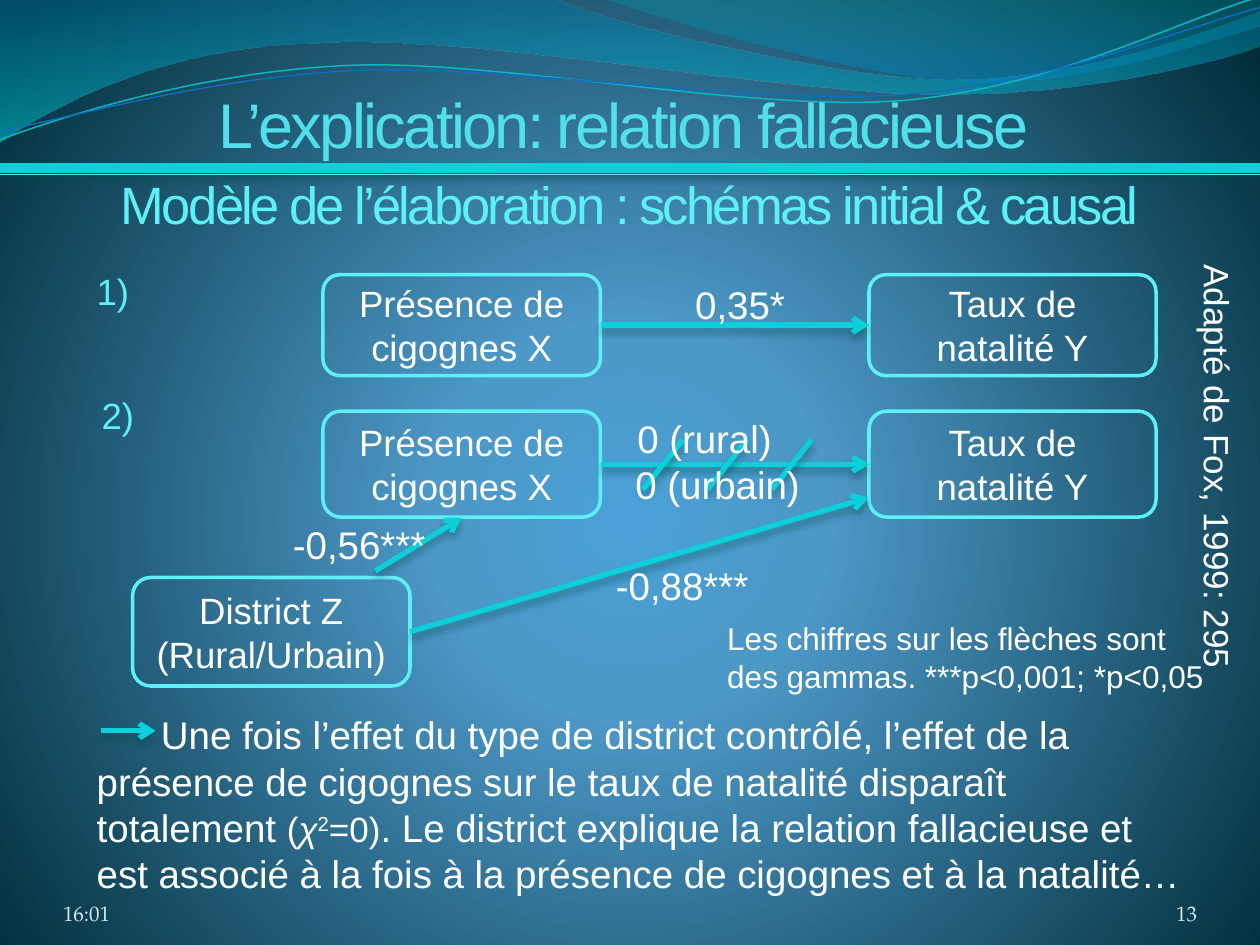
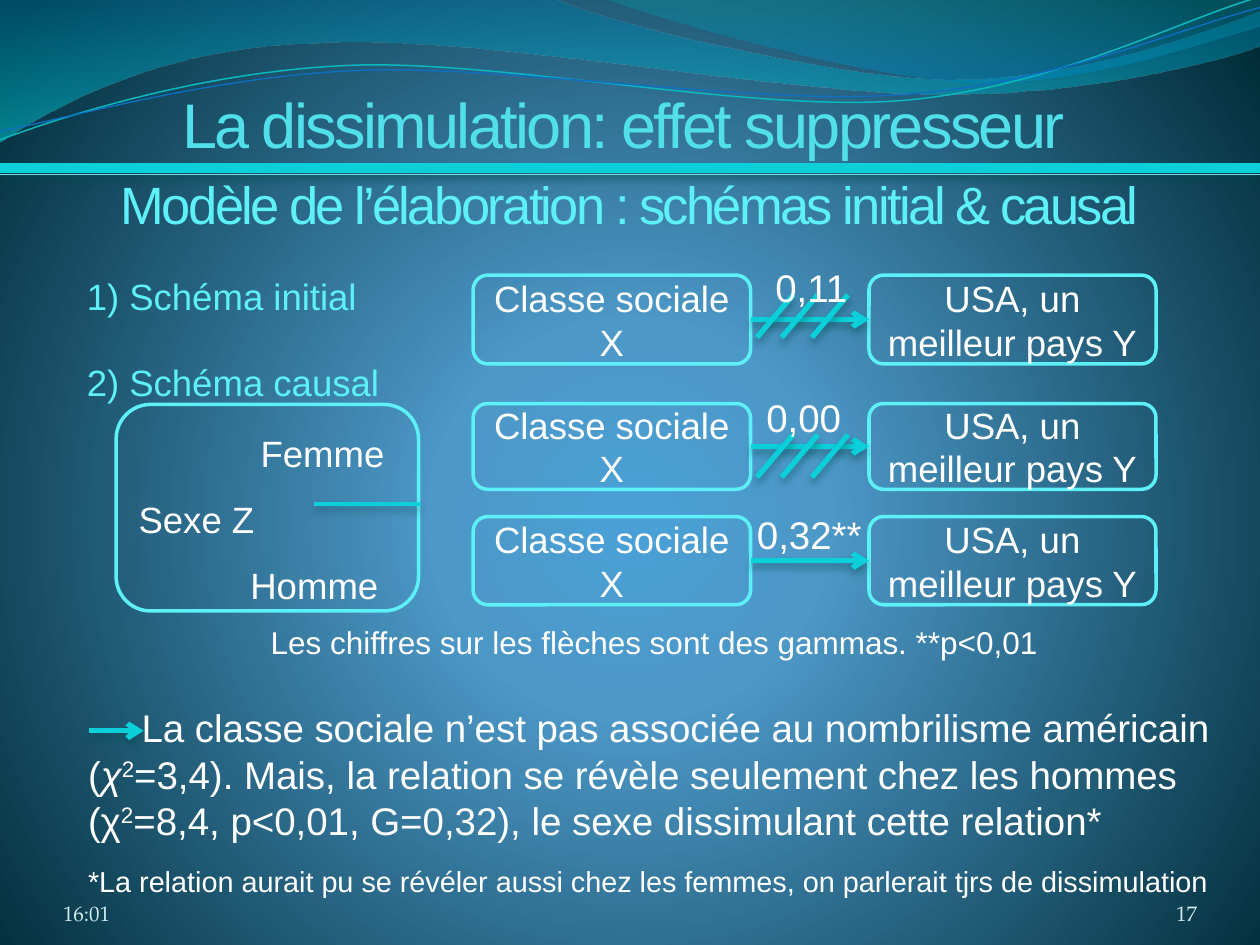
import copy

import pptx
import pptx.dml.color
import pptx.enum.shapes
import pptx.enum.text
import pptx.oxml
import pptx.oxml.ns
import pptx.util

Pt = pptx.util.Pt
RGBColor = pptx.dml.color.RGBColor
MSO_SHAPE = pptx.enum.shapes.MSO_SHAPE
MSO_CONNECTOR = pptx.enum.shapes.MSO_CONNECTOR
MSO_ANCHOR = pptx.enum.text.MSO_ANCHOR
PP_ALIGN = pptx.enum.text.PP_ALIGN
qn = pptx.oxml.ns.qn
NS = pptx.oxml.ns.nsdecls("a")

WHITE = RGBColor(0xFF, 0xFF, 0xFF)
AQUA = RGBColor(0x5E, 0xF0, 0xF7)
TITLE = RGBColor(0x51, 0xE0, 0xEA)
ACCENT = RGBColor(0x0B, 0xD0, 0xD9)
HAIRLINE = RGBColor(0x77, 0xD9, 0xE8)
FOOTER = RGBColor(0xD1, 0xEA, 0xEE)
WAVE_TEAL = RGBColor(0x0A, 0xB8, 0xBF)
WAVE_BLUE = RGBColor(0x0F, 0x6F, 0xC6)
BG_STOPS = [(0, RGBColor(0x4A, 0xA0, 0xD6)), (0.25, RGBColor(0x4C, 0x98, 0xC7)),
            (1, RGBColor(0x00, 0x2C, 0x38))]
BODY, LABEL, NOTE = 20.9, 22, 18

SHADOW = (f'<a:effectLst {NS}><a:outerShdw blurRad="57150" dist="38100" dir="5400000" '
          'algn="ctr" rotWithShape="0"><a:srgbClr val="024B4E"><a:alpha val="48000"/>'
          '</a:srgbClr></a:outerShdw></a:effectLst>')
NO_SHADOW = f'<a:effectLst {NS}/>'

WAVE_FILLS = [
    ([[(0, 0)], [(316.8, -0.7)],
      [(342.7, 12.2), (478, 45.4), (545.8, 45.4)], [(614.2, 45.4), (689.8, 18.7), (720, 6.5)],
      [(720.7, 25.9)],
      [(707.8, 31.7), (626.4, 54.7), (537, 54)], [(447.8, 54), (275, 20.2), (185, 24.5)],
      [(92.9, 25.9), (33, 59.8), (-0.7, 81.4)]],
     [(0, RGBColor(0x00, 0x74, 0xA1), 45), (1, RGBColor(0x00, 0xC6, 0xCF), 55)]),
    ([[(344.9, -0.7)],
      [(366.5, 7.9), (491, 44.6), (553.7, 46.8)], [(616.3, 49.7), (691.9, 23), (720, 15.1)],
      [(720, 0)]],
     [(0, RGBColor(0x00, 0xA1, 0xA9), 30), (0.8, RGBColor(0x00, 0x8B, 0xBF), 45)]),
]
WAVE_LINES = [
    ([[(0, 79.9)],
      [(34.6, 67), (113.8, 41), (199.4, 37.4)], [(284.4, 33.8), (427, 64.1), (513.4, 57.6)],
      [(599.8, 51.1), (675.4, 10.8), (718.6, -1.4)]], WAVE_TEAL, 0.85),
    ([[(0, 74.9)],
      [(33.8, 69.1), (118, 43.9), (203.8, 40.3)], [(290.2, 36.7), (429.8, 60.5), (516.2, 54)],
      [(602, 48.2), (677.5, 15.1), (720, 4.3)]], WAVE_BLUE, 0.75),
]


def add_text(s, box, text, size, color=WHITE, align=PP_ALIGN.LEFT, outlined=False, font="Arial"):
    box = [Pt(v) for v in box]
    if outlined:
        sp = s.shapes.add_shape(MSO_SHAPE.ROUNDED_RECTANGLE, *box)
        sp.shadow.inherit = False
        sp.fill.background()
        sp.line.color.rgb = AQUA
        sp.line.width = Pt(2)
    else:
        sp = s.shapes.add_textbox(*box)
    tf = sp.text_frame
    tf.word_wrap = True
    tf.vertical_anchor = MSO_ANCHOR.MIDDLE if outlined else MSO_ANCHOR.TOP
    tf.text = text
    for p in tf.paragraphs:
        p.alignment = align
        for r in p.runs:
            r.font.size = Pt(size)
            r.font.name = font
            r.font.color.rgb = color
    return sp


def add_line(s, x1, y1, x2, y2, width=3, color=ACCENT, arrow=False, shadow=True):
    ln = s.shapes.add_connector(MSO_CONNECTOR.STRAIGHT, Pt(x1), Pt(y1), Pt(x2), Pt(y2))
    ln.line.color.rgb = color
    ln.line.width = Pt(width)
    if arrow:
        ln.line._get_or_add_ln().append(pptx.oxml.parse_xml(f'<a:tailEnd {NS} type="arrow"/>'))
    ln._element.spPr.append(pptx.oxml.parse_xml(SHADOW if shadow else NO_SHADOW))


prs = pptx.Presentation()
prs.slide_width, prs.slide_height = Pt(720), Pt(540)
fallacy, suppressor = [prs.slides.add_slide(prs.slide_layouts[6]) for _ in range(2)]

master = prs.slide_master
master.background.fill.gradient()
grad = master.element.xpath(".//p:bg//a:gradFill")[0]
stops = grad.find(qn("a:gsLst"))
stops.append(copy.deepcopy(stops[0]))
for stop, (pos, color) in zip(master.background.fill.gradient_stops, BG_STOPS):
    stop.position = pos
    stop.color.rgb = color
grad.replace(grad.find(qn("a:lin")), pptx.oxml.parse_xml(
    f'<a:path {NS} path="circle"><a:fillToRect l="10000" t="110000" r="10000" b="100000"/></a:path>'))

for i, (segments, *style) in enumerate(WAVE_FILLS + WAVE_LINES):
    filled = len(style) == 1
    points = [(Pt(x), Pt(y)) for seg in segments for x, y in seg]
    fb = fallacy.shapes.build_freeform(*points[0], scale=1.0)
    fb.add_line_segments(points[1:], close=filled)
    wave = fb.convert_to_shape()
    wave.shadow.inherit = False
    steps = iter(wave._element.xpath(".//a:lnTo"))
    for seg in segments[1:]:
        first = next(steps)
        if len(seg) == 3:
            curve = pptx.oxml.parse_xml(f"<a:cubicBezTo {NS}/>")
            first.addprevious(curve)
            for step in (first, next(steps), next(steps)):
                curve.append(step[0])
                step.getparent().remove(step)
    if filled:
        wave.line.fill.background()
        wave.fill.gradient()
        wave.fill.gradient_angle = 270
        for stop, (pos, color, alpha) in zip(wave.fill.gradient_stops, style[0]):
            stop.position = pos
            stop.color.rgb = color
        for clr, (pos, color, alpha) in zip(wave._element.xpath(".//a:gs/a:srgbClr"), style[0]):
            clr.append(pptx.oxml.parse_xml(f'<a:alpha {NS} val="{alpha * 1000}"/>'))
    else:
        wave.fill.background()
        wave.line.color.rgb, wave.line.width = style[0], Pt(style[1])
    wave._element.nvSpPr.cNvPr.set("id", str(20 + i))
    master.shapes._spTree.append(wave._element)

CHI_20 = [("(", 20, ""), ("χ", 20, "i"), ("2", 20, "sup"), ("=0)", 20, "")]
for s, title, number, arrow_x, box, indent, runs in [
    (fallacy, "L’explication: relation fallacieuse", "13", 58, (48.2, 403, 641, 114), 36.7,
     [("Une fois l’effet du type de district contrôlé, l’effet de la présence de cigognes "
       "sur le taux de natalité disparaît totalement ", 22, ""), *CHI_20,
      (". Le district explique la relation fallacieuse et est associé à la fois à la présence "
       "de cigognes et à la natalité…", 22, "")]),
    (suppressor, "La dissimulation: effet suppresseur", "17", 51.1, (43.2, 399, 672, 119), 30.6,
     [("La classe sociale n’est pas associée au nombrilisme américain (", 22, ""),
      ("χ", 22, "i"), ("2", 22, "sup"),
      ("=3,4). Mais, la relation se révèle seulement chez les hommes (χ", 22, ""),
      ("2", 22, "sup"),
      ("=8,4, p<0,01, G=0,32), le sexe dissimulant cette relation*", 22, "")]),
]:
    date = add_text(s, (36, 500.4, 168, 28.8), "16:01", 12, FOOTER, font="TeX Gyre Pagella")
    num = add_text(s, (624, 500.4, 60, 28.8), number, 12, FOOTER, PP_ALIGN.RIGHT,
                   font="TeX Gyre Pagella")
    head = add_text(s, (-2.9, 40.3, 720, 51.8), title, 36, TITLE, PP_ALIGN.CENTER)
    sub = add_text(s, (0, 95, 720, 44), "Modèle de l’élaboration : schémas initial & causal",
                   30, AQUA, PP_ALIGN.CENTER)
    for sp in (head, sub):
        sp.text_frame.paragraphs[0].runs[0].font._element.set("spc", "-150")
    for sp in (head, date, num):
        tf = sp.text_frame
        tf.vertical_anchor = MSO_ANCHOR.BOTTOM
        tf.margin_left = tf.margin_top = tf.margin_right = tf.margin_bottom = 0
    head.text_frame.margin_right = Pt(1.44)

    body = add_text(s, box, "", 22)
    p = body.text_frame.paragraphs[0]
    p._p.get_or_add_pPr().set("indent", str(Pt(indent)))
    for text, size, style in runs:
        r = p.add_run()
        r.text = text
        r.font.size = Pt(size)
        r.font.name = "Arial"
        r.font.color.rgb = WHITE
        if style == "i":
            r.font.italic = True
        if style == "sup":
            r.font._element.set("baseline", "30000")
    add_line(s, 0, 96, 720, 96, 6)
    add_line(s, 0, 99.8, 720, 99.8, 0.75, HAIRLINE, shadow=False)
    add_line(s, arrow_x, 417.6, arrow_x + 31, 417.6, arrow=True)

p = body.text_frame.add_paragraph()
p.text = "*La relation aurait pu se révéler aussi chez les femmes, on parlerait tjrs de dissimulation"
p.space_before = Pt(12)
p.runs[0].font.size = Pt(16.5)
p.runs[0].font.name = "Arial"
p.runs[0].font.color.rgb = WHITE

s = fallacy
for y, h in [(157, 57.6), (235, 60.5)]:
    add_text(s, (184.6, y, 158.5, h), "Présence de cigognes X", BODY, WHITE, PP_ALIGN.CENTER, True)
    add_text(s, (496.6, y, 164, h), "Taux de natalité Y", BODY, WHITE, PP_ALIGN.CENTER, True)
    add_line(s, 343.3, y + h / 2, 496.6, y + h / 2, arrow=True)
add_text(s, (75.8, 330, 158.5, 62), "District Z (Rural/Urbain)", BODY, WHITE, PP_ALIGN.CENTER, True)
add_line(s, 234.3, 361, 496.3, 284.4, arrow=True)
add_line(s, 214.6, 326.2, 263.8, 295.9, arrow=True)
for i in range(3):
    x = 390.2 + 36.8 * i
    add_line(s, x, 251.3, x - 22.7, 279.7)
for box, text, size, color in [
    ((48.2, 150, 41, 36), "1)", BODY, AQUA),
    ((51, 221, 41, 36), "2)", BODY, AQUA),
    ((390.2, 157, 94.3, 33.8), "0,35*", LABEL, WHITE),
    ((344.9, 317.5, 94.3, 33.8), "-0,88***", LABEL, WHITE),
    ((160.3, 294.2, 94.3, 33.8), "-0,56***", LABEL, WHITE),
    ((408.5, 350.2, 288, 51), "Les chiffres sur les flèches sont des gammas. ***p<0,001; *p<0,05",
     NOTE, WHITE),
    ((357.1, 233.6, 219, 33.8), "0 (rural)", LABEL, WHITE),
    ((356, 260, 118.8, 33.8), "0 (urbain)", LABEL, WHITE),
]:
    add_text(s, box, text, size, color)
add_text(s, (572.8, 251, 245.5, 31.7), "Adapté de Fox, 1999: 295", 20).rotation = 90

s = suppressor
sexe = add_text(s, (66.4, 231.1, 172.8, 118), "Femme\nSexe Z\nHomme", BODY, outlined=True)
for p, indent in zip(sexe.text_frame.paragraphs, (69.7, 0, 63.9)):
    p.line_spacing = 1.5
    p._p.get_or_add_pPr().set("indent", str(Pt(indent)))
add_line(s, 240.5, 288, 179.3, 288, 2)
for y, h in [(157.2, 50.8), (230.6, 49), (295.2, 50.4)]:
    add_text(s, (270.4, y, 158.5, h), "Classe sociale X", BODY, WHITE, PP_ALIGN.CENTER, True)
    add_text(s, (496.6, y, 164, h), "USA, un meilleur pays Y", BODY, WHITE, PP_ALIGN.CENTER, True)
    add_line(s, 429.1, y + h / 2, 496.6, y + h / 2, arrow=True)
for y in (168.5, 248.4):
    for x in (453.2, 467.3, 484.6):
        add_line(s, x, y, x - 20.6, y + 24.3)
for box, text, size, color in [
    ((42.5, 153, 215, 32.4), "1) Schéma initial", BODY, AQUA),
    ((42.5, 202.3, 209, 32.4), "2) Schéma causal", BODY, AQUA),
    ((430.8, 221.8, 74, 33.8), "0,00", LABEL, WHITE),
    ((425.5, 288.3, 96.5, 33.8), "0,32**", LABEL, WHITE),
    ((147.6, 352.3, 536.4, 28.8), "Les chiffres sur les flèches sont des gammas. **p<0,01", NOTE, WHITE),
    ((436, 147.2, 74, 33.8), "0,11", LABEL, WHITE),
]:
    add_text(s, box, text, size, color)

prs.save("out.pptx")
